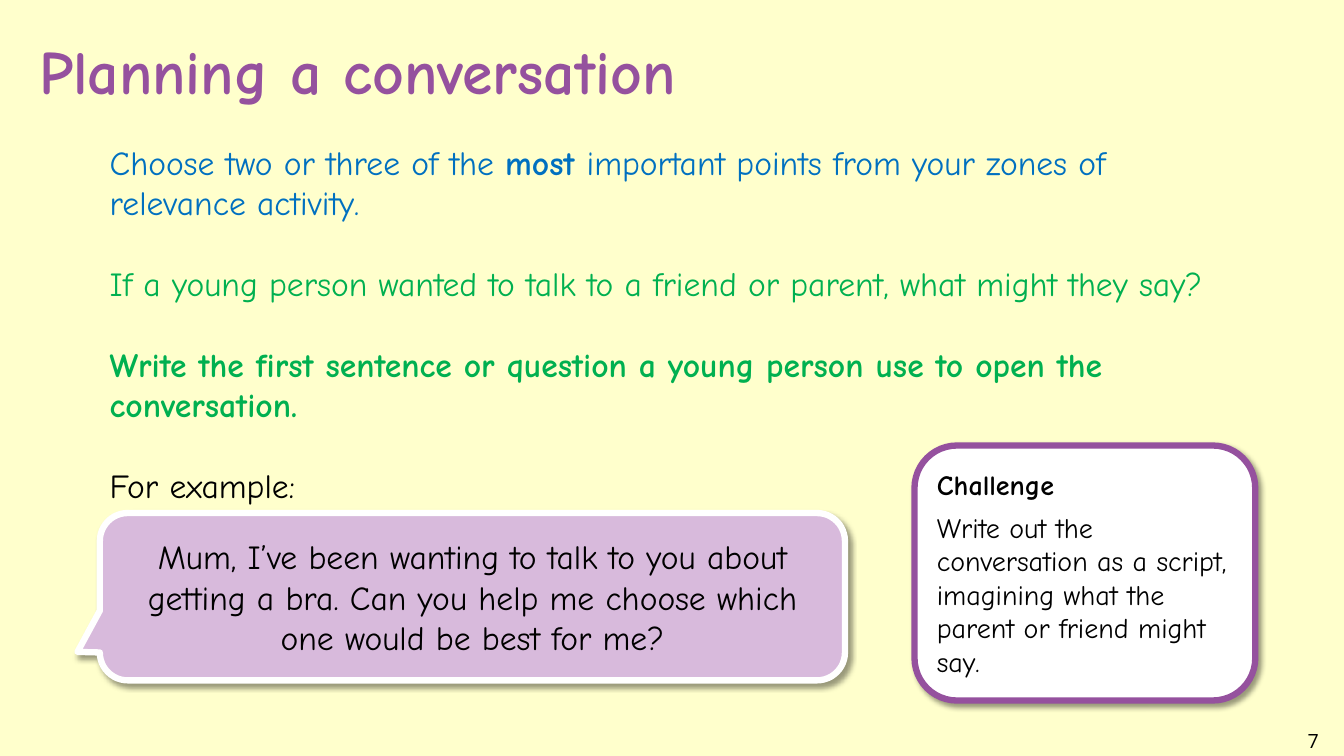
from lxml import etree
from pptx import Presentation
from pptx import util as u
from pptx.dml.color import RGBColor
from pptx.enum import shapes, text
from pptx.oxml import ns

PX = 9144
CREAM = RGBColor(0xFF, 0xFF, 0xCC)
PURPLE = RGBColor(0x95, 0x51, 0x9E)
LILAC = RGBColor(0xD8, 0xBA, 0xDC)
BLUE = RGBColor(0x00, 0x70, 0xC0)
GREEN = RGBColor(0x00, 0xB0, 0x50)
BLACK = RGBColor(0, 0, 0)
WHITE = RGBColor(0xFF, 0xFF, 0xFF)


def scale(box):
    return [n * PX for n in box]


def write(para, words, size=24, color=BLACK, bold=False, font="Comic Neue",
          align=text.PP_ALIGN.LEFT, before=0):
    para.alignment = align
    if before:
        para.space_before = u.Pt(before)
    run = para.add_run()
    run.text = words
    run.font.name = font
    run.font.size = u.Pt(size)
    run.font.bold = bold
    run.font.color.rgb = color


def add_frame(slide, box):
    frame = slide.shapes.add_textbox(*scale(box)).text_frame
    frame.word_wrap = True
    return frame


def add_panel(slide, kind, box, fill, edge):
    panel = slide.shapes.add_shape(kind, *scale(box))
    panel.fill.solid()
    panel.fill.fore_color.rgb = fill
    panel.line.color.rgb = edge
    panel.line.width = u.Pt(4.5)
    panel.shadow.inherit = False
    effects = panel._element.spPr.find(ns.qn("a:effectLst"))
    shade = etree.SubElement(effects, ns.qn("a:outerShdw"), blurRad=str(u.Pt(4)),
                             dist=str(u.Pt(3)), dir="2700000", algn="tl", rotWithShape="0")
    tint = etree.SubElement(shade, ns.qn("a:srgbClr"), val=str(BLACK))
    etree.SubElement(tint, ns.qn("a:alpha"), val="40000")
    frame = panel.text_frame
    frame.word_wrap = True
    frame.vertical_anchor = text.MSO_ANCHOR.MIDDLE
    return panel


def add_title(slide, box):
    write(add_frame(slide, box).paragraphs[0], "Planning a conversation",
          size=44, color=PURPLE, bold=True)


def add_task(slide, box):
    frame = add_frame(slide, box)
    first = frame.paragraphs[0]
    write(first, "Choose two or three of the ", color=BLUE)
    write(first, "most ", color=BLUE, bold=True)
    write(first, "important points from your zones of relevance activity.", color=BLUE)
    steps = [
        ("If a young person wanted to talk to a friend or parent, what might they say?",
         GREEN, False),
        ("Write the first sentence or question a young person use to open the conversation.",
         GREEN, True),
        ("For example:", BLACK, False),
    ]
    for words, color, bold in steps:
        write(frame.add_paragraph(), words, color=color, bold=bold, before=28.8)


def add_speech(slide, box):
    bubble = add_panel(slide, shapes.MSO_SHAPE.ROUNDED_RECTANGULAR_CALLOUT, box, LILAC, WHITE)
    bubble.adjustments[0] = -0.53
    bubble.adjustments[1] = 0.33
    write(bubble.text_frame.paragraphs[0],
          "Mum, I’ve been wanting to talk to you about getting a bra. "
          "Can you help me choose which one would be best for me?",
          align=text.PP_ALIGN.CENTER)


def add_challenge(slide, box):
    card = add_panel(slide, shapes.MSO_SHAPE.ROUNDED_RECTANGLE, box, WHITE, PURPLE)
    frame = card.text_frame
    write(frame.paragraphs[0], "Challenge", size=20, bold=True)
    write(frame.add_paragraph(),
          "Write out the conversation as a script, imagining what the parent or friend might say.",
          size=20, before=6)


def add_number(slide, box):
    write(add_frame(slide, box).paragraphs[0], "7", size=14, font="Open Sans")


def main():
    deck = Presentation()
    deck.slide_width, deck.slide_height = scale((1333, 750))
    slide = deck.slides.add_slide(deck.slide_layouts[6])
    slide.background.fill.solid()
    slide.background.fill.fore_color.rgb = CREAM
    add_number(slide, (1287, 718, 46, 40))
    add_title(slide, (29, 28, 1172, 84))
    add_task(slide, (99, 136, 1124, 495))
    add_speech(slide, (99, 509, 739, 166))
    add_challenge(slide, (907, 442, 338, 253))
    deck.save("out.pptx")


if __name__ == "__main__":
    main()
